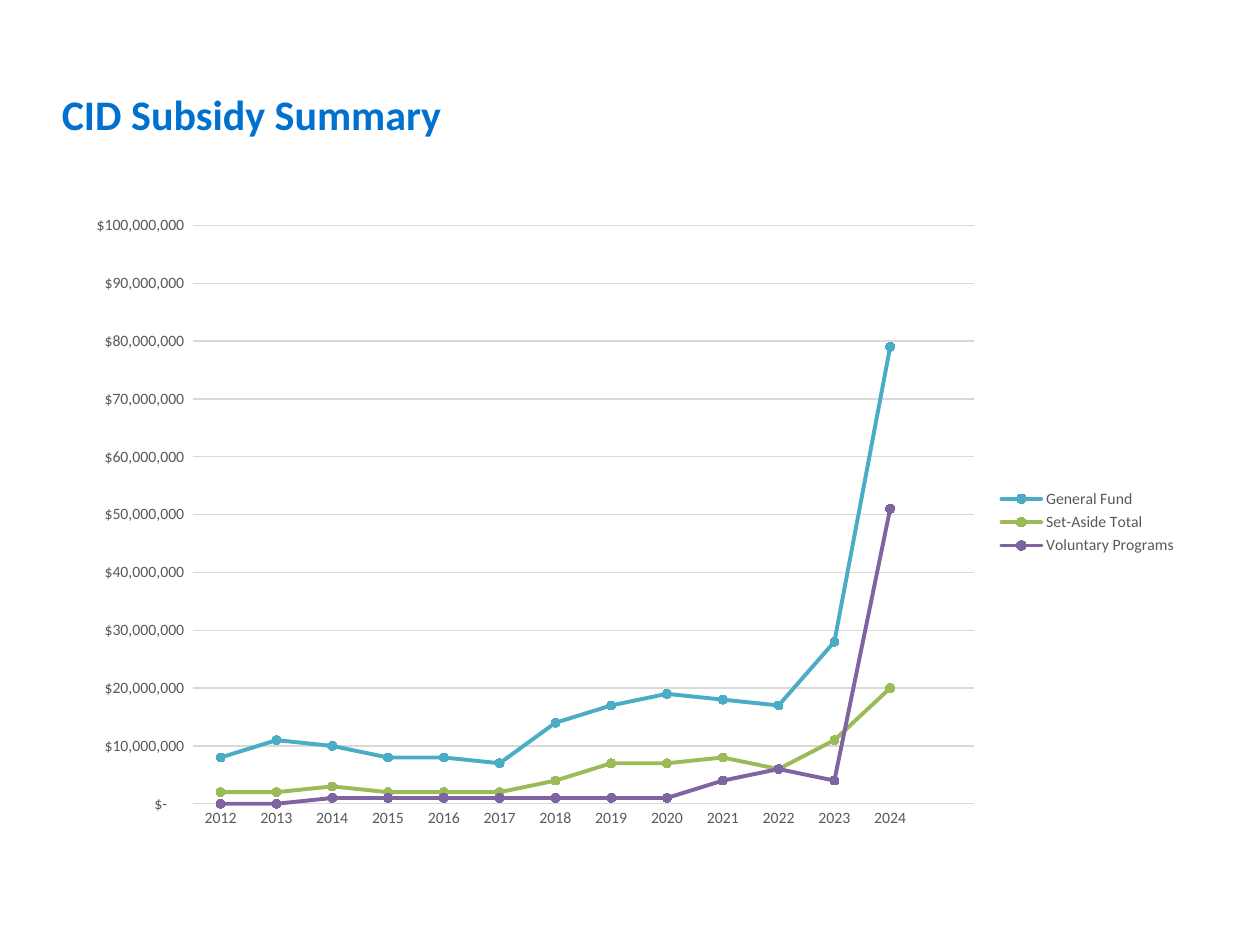
from lxml.etree import SubElement
from pptx import Presentation
from pptx.chart.data import CategoryChartData
from pptx.dml.color import RGBColor
from pptx.enum.chart import XL_CHART_TYPE, XL_LEGEND_POSITION, XL_MARKER_STYLE, XL_TICK_MARK
from pptx.enum.text import MSO_ANCHOR, PP_ALIGN
from pptx.oxml.ns import qn
from pptx.util import Inches, Pt

BLACK = RGBColor(0x00, 0x00, 0x00)
TITLE_BLUE = RGBColor(0x00, 0x71, 0xCE)
LABEL_GRAY = RGBColor(0x59, 0x59, 0x59)
GRID_GRAY = RGBColor(0xD9, 0xD9, 0xD9)
AQUA = RGBColor(0x4B, 0xAC, 0xC6)
GREEN = RGBColor(0x9B, 0xBB, 0x59)
PURPLE = RGBColor(0x80, 0x64, 0xA2)

DOLLARS = '_("$"* #,##0_);_("$"* \\(#,##0\\);_("$"* "-"??_);_(@_)'
MILLION = 1_000_000
YEARS = [str(year) for year in range(2012, 2025)] + [""]
SUBSIDIES = [
    ("General Fund", AQUA, [8, 11, 10, 8, 8, 7, 14, 17, 19, 18, 17, 28, 79]),
    ("Set-Aside Total", GREEN, [2, 2, 3, 2, 2, 2, 4, 7, 7, 8, 6, 11, 20]),
    ("Voluntary Programs", PURPLE, [0, 0, 1, 1, 1, 1, 1, 1, 1, 4, 6, 4, 51]),
]


def style_font(font, size, color, bold=False, name="Calibri"):
    font.name = name
    font.size = Pt(size)
    font.bold = bold
    font.color.rgb = color


def write_text(frame, text, align=PP_ALIGN.LEFT, anchor=MSO_ANCHOR.MIDDLE, **font_format):
    frame.text = text
    frame.word_wrap = True
    frame.vertical_anchor = anchor
    paragraph = frame.paragraphs[0]
    paragraph.alignment = align
    style_font(paragraph.runs[0].font, **font_format)


def style_line(line, color, width):
    line.color.rgb = color
    line.width = Pt(width)


def place_plot(chart, **fractions):
    plot_area = chart._chartSpace.chart.plotArea
    layout = plot_area.find(qn("c:layout"))
    if layout is None:
        layout = SubElement(plot_area, qn("c:layout"))
        plot_area.insert(0, layout)
    manual = SubElement(layout, qn("c:manualLayout"))
    settings = {"layoutTarget": "inner", "xMode": "edge", "yMode": "edge", **fractions}
    for tag, value in settings.items():
        SubElement(manual, qn(f"c:{tag}")).set("val", str(value))


class SummarySlide:
    label_size = 9
    line_width = 2.25
    grid_width = 0.75
    marker_size = 5

    def __init__(self, presentation):
        self.slide = presentation.slides.add_slide(presentation.slide_layouts[5])

    def add_title(self, text, left, top, width, height):
        title = self.slide.shapes.title
        title.left, title.top = Inches(left), Inches(top)
        title.width, title.height = Inches(width), Inches(height)
        write_text(title.text_frame, text, size=24, color=TITLE_BLUE, bold=True)

    def add_line_chart(self, left, top, width, height):
        data = CategoryChartData(number_format=DOLLARS)
        data.categories = YEARS
        for name, _, millions in SUBSIDIES:
            data.add_series(name, [value * MILLION for value in millions] + [None])
        chart = self.slide.shapes.add_chart(
            XL_CHART_TYPE.LINE_MARKERS, Inches(left), Inches(top),
            Inches(width), Inches(height), data).chart
        chart.has_title = False
        style_font(chart.font, 10, BLACK)
        chart.plots[0].vary_by_categories = False
        place_plot(chart, x=0.97 / width, y=0.17 / height, w=6.2 / width, h=4.59 / height)
        self.style_axes(chart)
        self.style_series(chart)
        self.style_legend(chart)

    def style_axes(self, chart):
        for axis in (chart.category_axis, chart.value_axis):
            axis.major_tick_mark = axis.minor_tick_mark = XL_TICK_MARK.NONE
            style_font(axis.tick_labels.font, self.label_size, LABEL_GRAY)
        style_line(chart.category_axis.format.line, GRID_GRAY, self.grid_width)
        dollars = chart.value_axis
        dollars.minimum_scale, dollars.maximum_scale = 0, 100 * MILLION
        dollars.major_unit = 10 * MILLION
        dollars.tick_labels.number_format = DOLLARS
        dollars.tick_labels.number_format_is_linked = False
        dollars.format.line.fill.background()
        style_line(dollars.major_gridlines.format.line, GRID_GRAY, self.grid_width)

    def style_series(self, chart):
        for series, (_, color, _) in zip(chart.plots[0].series, SUBSIDIES):
            series.smooth = False
            style_line(series.format.line, color, self.line_width)
            series._element.find(qn("c:spPr")).find(qn("a:ln")).set("cap", "rnd")
            marker = series.marker
            marker.style = XL_MARKER_STYLE.CIRCLE
            marker.size = self.marker_size
            marker.format.fill.solid()
            marker.format.fill.fore_color.rgb = color
            style_line(marker.format.line, color, self.grid_width)

    def style_legend(self, chart):
        chart.has_legend = True
        chart.legend.position = XL_LEGEND_POSITION.RIGHT
        chart.legend.include_in_layout = False
        style_font(chart.legend.font, self.label_size, LABEL_GRAY)


def main():
    presentation = Presentation()
    presentation.slide_width, presentation.slide_height = Inches(10), Inches(7.5)
    summary = SummarySlide(presentation)
    summary.add_title("CID Subsidy Summary", 0.39, 0.65, 8.19, 0.5)
    summary.add_line_chart(0.56, 1.62, 8.88, 5.05)
    presentation.save("out.pptx")


if __name__ == "__main__":
    main()
